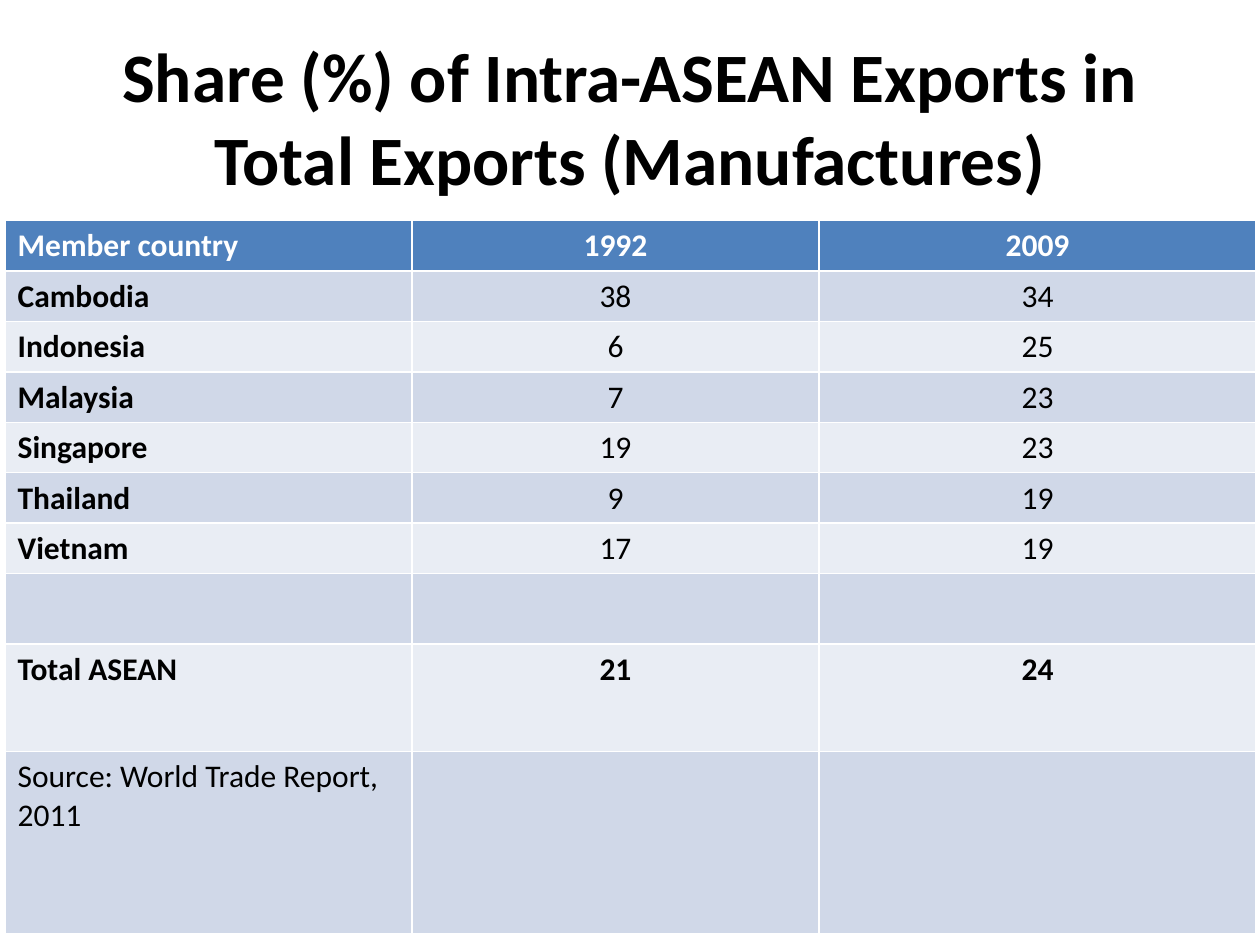
import pptx
import pptx.dml.color
import pptx.enum.text
import pptx.util
from pptx.util import Inches

THEME = {
    "font": "Calibri",
    "title_size": 39.6,
    "table_size": 18,
    "text": "000000",
    "header_text": "FFFFFF",
    "header_fill": "4F81BD",
    "bands": ("E9EDF4", "D0D8E8"),
}
ALIGN = pptx.enum.text.PP_ALIGN
ANCHOR = pptx.enum.text.MSO_ANCHOR


def rgb(value):
    return pptx.dml.color.RGBColor.from_string(value)


def write(paragraph, text, size, color, bold, alignment):
    paragraph.text = text
    paragraph.alignment = alignment
    formats = {"name": THEME["font"], "size": pptx.util.Pt(size), "bold": bold}
    for name, value in formats.items():
        setattr(paragraph.font, name, value)
    paragraph.font.color.rgb = rgb(color)


presentation = pptx.Presentation()
presentation.slide_width = Inches(10)
presentation.slide_height = Inches(7.5)
slide = presentation.slides.add_slide(presentation.slide_layouts[6])

# Title
title = slide.shapes.add_textbox(Inches(0.5), Inches(0.3), Inches(9), Inches(1.25))
title.text_frame.word_wrap = True
title.text_frame.vertical_anchor = ANCHOR.MIDDLE
write(title.text_frame.paragraphs[0],
      "Share (%) of Intra-ASEAN Exports in Total Exports (Manufactures)",
      THEME["title_size"], THEME["text"], True, ALIGN.CENTER)

# Export shares by member country; the table style draws the white grid
export_shares = [
    ("Member country", "1992", "2009"),
    ("Cambodia", "38", "34"),
    ("Indonesia", "6", "25"),
    ("Malaysia", "7", "23"),
    ("Singapore", "19", "23"),
    ("Thailand", "9", "19"),
    ("Vietnam", "17", "19"),
    ("", "", ""),
    ("Total ASEAN", "21", "24"),
    ("Source: World Trade Report, 2011", "", ""),
]
column_widths = [3.23, 3.23, 3.47]
row_heights = [0.39] * 7 + [0.56, 0.85, 1.45]
total_row, source_row = 8, 9

table = slide.shapes.add_table(
    len(export_shares), len(column_widths), Inches(0.04), Inches(1.75),
    Inches(sum(column_widths)), Inches(sum(row_heights))).table
for column, width in zip(table.columns, column_widths):
    column.width = Inches(width)
for row, height in zip(table.rows, row_heights):
    row.height = Inches(height)

for row_index, values in enumerate(export_shares):
    is_header = row_index == 0
    fill = THEME["header_fill"] if is_header else THEME["bands"][row_index % 2]
    color = THEME["header_text"] if is_header else THEME["text"]
    for column_index, value in enumerate(values):
        is_label = column_index == 0
        bold = row_index in (0, total_row) or (is_label and row_index != source_row)
        cell = table.cell(row_index, column_index)
        cell.fill.solid()
        cell.fill.fore_color.rgb = rgb(fill)
        write(cell.text_frame.paragraphs[0], value, THEME["table_size"], color, bold,
              ALIGN.LEFT if is_label else ALIGN.CENTER)

presentation.save("out.pptx")
